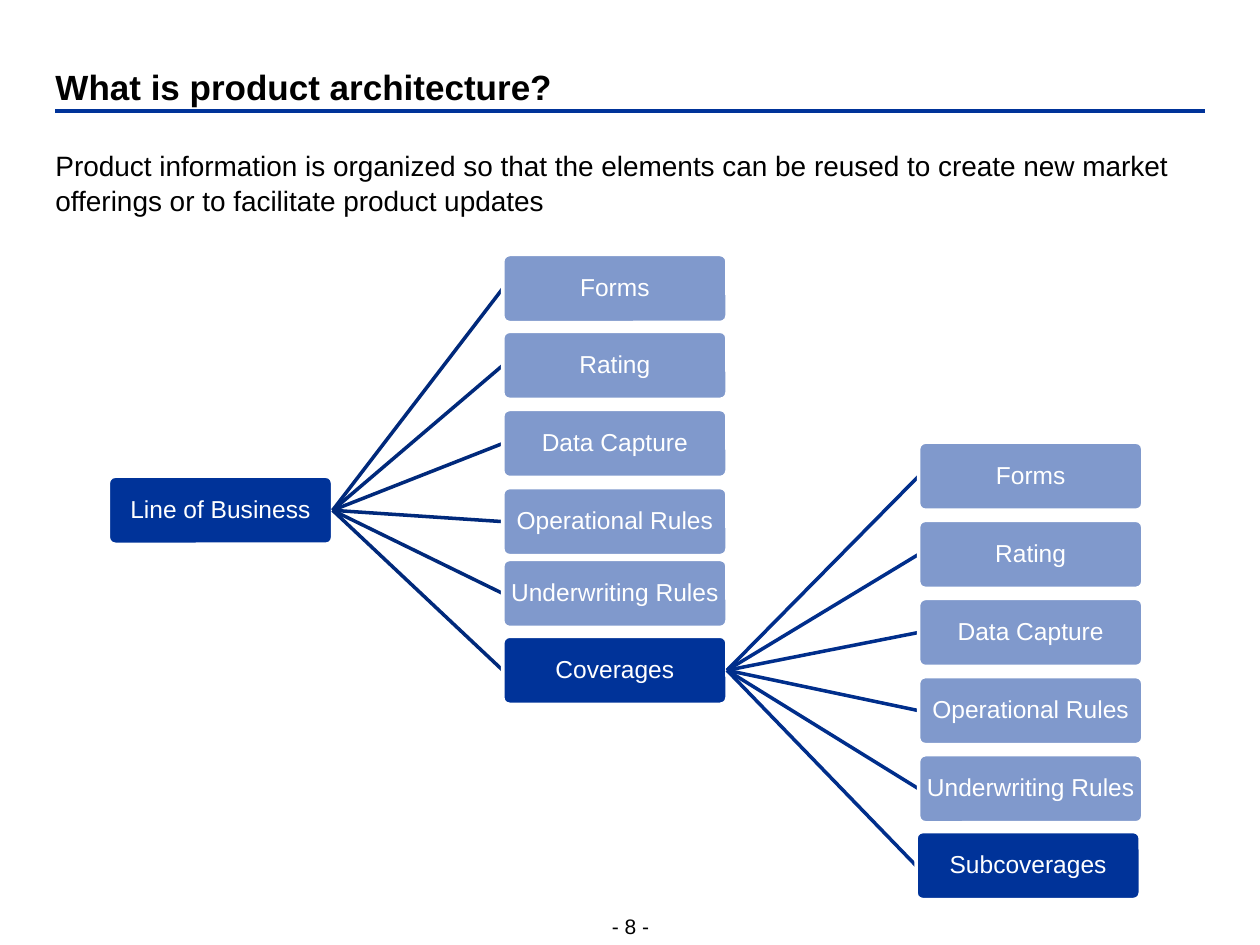
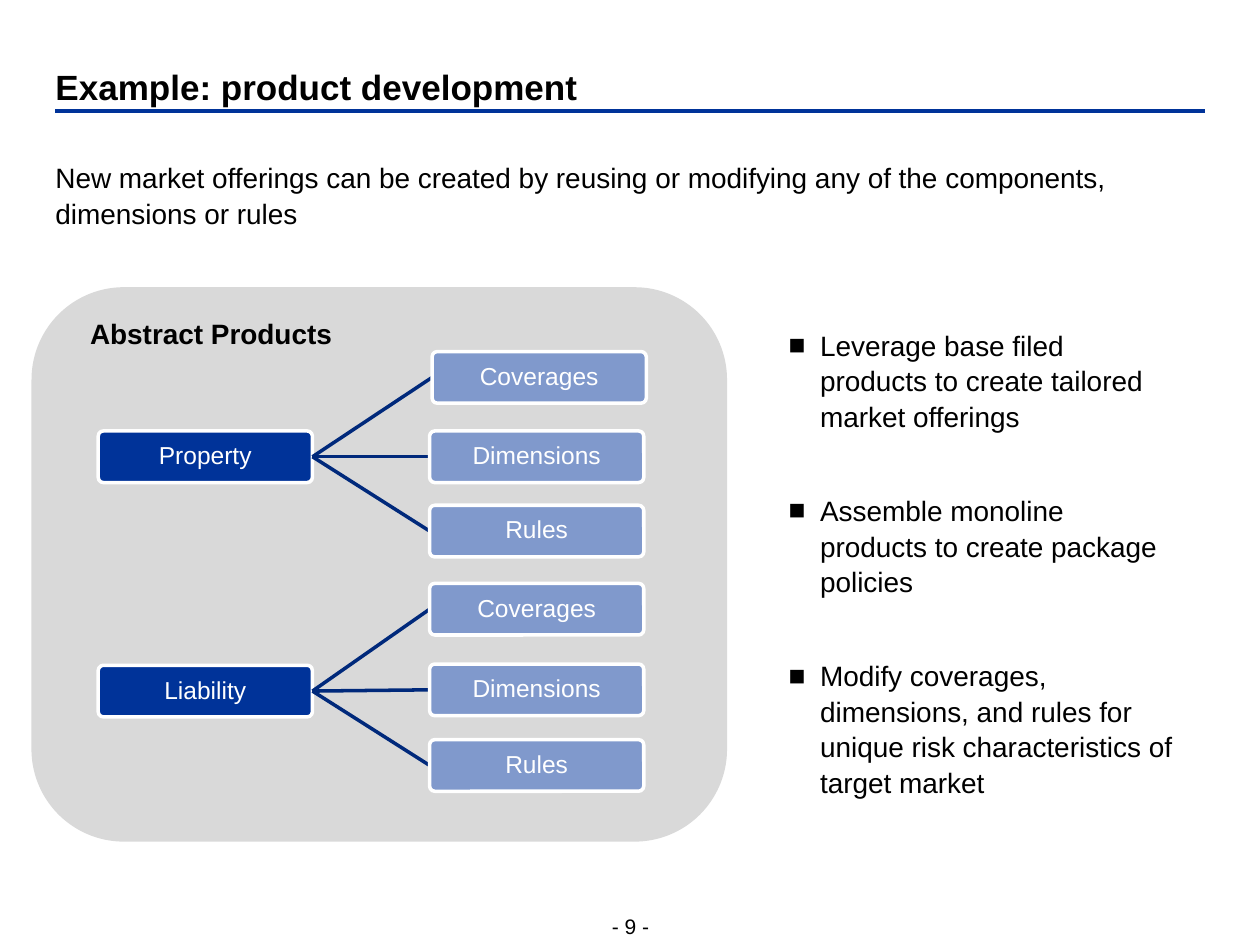
from lxml import etree
from pptx import Presentation
from pptx.dml.color import RGBColor
from pptx.enum.shapes import MSO_CONNECTOR, MSO_SHAPE
from pptx.enum.text import MSO_ANCHOR, PP_ALIGN
from pptx.oxml.ns import qn
from pptx.util import Inches, Pt

FONT = "Arial"
BLACK = RGBColor(0x00, 0x00, 0x00)
WHITE = RGBColor(0xFF, 0xFF, 0xFF)
BLUE = RGBColor(0x00, 0x33, 0x99)
LIGHT_BLUE = RGBColor(0x80, 0x99, 0xCC)
NAVY = RGBColor(0x00, 0x29, 0x7B)
DEEP_BLUE = RGBColor(0x00, 0x2E, 0x8B)
GREY = RGBColor(0xD9, 0xD9, 0xD9)

LINE_SPACING = 1.06
LEFT, WIDTH = 0.44, 9.12
RIGHT, LEFT_SIDE = 3, 1  # connection sites of a rectangle


def set_margins(tf, left=0, top=0, right=0, bottom=0):
    tf.margin_left, tf.margin_top = Inches(left), Inches(top)
    tf.margin_right, tf.margin_bottom = Inches(right), Inches(bottom)


def format_paragraph(p, size, color=BLACK, bold=False, align=PP_ALIGN.LEFT,
                     spacing=LINE_SPACING):
    p.alignment = align
    p.line_spacing = spacing
    for r in p.runs:
        r.font.name, r.font.size = FONT, Pt(size)
        r.font.bold, r.font.color.rgb = bold, color


def add_text(slide, box, text, size, anchor=MSO_ANCHOR.TOP, wrap=True, **style):
    tf = slide.shapes.add_textbox(*map(Inches, box)).text_frame
    tf.word_wrap, tf.vertical_anchor = wrap, anchor
    set_margins(tf)
    tf.text = text
    format_paragraph(tf.paragraphs[0], size, **style)


def add_line(slide, start, end, color, width):
    line = slide.shapes.add_connector(MSO_CONNECTOR.STRAIGHT,
                                      *map(Inches, start + end))
    line.line.color.rgb, line.line.width = color, Pt(width)
    etree.SubElement(line._element.spPr, qn("a:effectLst"))
    return line


def add_rounded(slide, box, fill):
    sp = slide.shapes.add_shape(MSO_SHAPE.ROUNDED_RECTANGLE, *map(Inches, box))
    sp.shadow.inherit = False
    sp.fill.solid()
    sp.fill.fore_color.rgb = fill
    sp.line.fill.background()
    return sp


def add_frame(prs, title, intro, intro_top, number):
    """Slide with title, rule, introduction and page number."""
    slide = prs.slides.add_slide(prs.slide_layouts[6])
    add_text(slide, (4.8, 7.24, 0.41, 0.21), f"- {number} -", 12,
             anchor=MSO_ANCHOR.BOTTOM, wrap=False, align=PP_ALIGN.CENTER)
    add_line(slide, (LEFT, 0.88), (LEFT + WIDTH, 0.88), BLUE, 2.25)
    add_text(slide, (LEFT, 0.45, WIDTH, 0.4), title, 20,
             anchor=MSO_ANCHOR.BOTTOM, bold=True, spacing=1.0)
    add_text(slide, (LEFT, intro_top, WIDTH, 0.68), intro, 16)
    return slide


def add_node(slide, box, text, fill):
    sp = add_rounded(slide, box, fill)
    sp.adjustments[0] = 0.1
    sp.line.color.rgb, sp.line.width = WHITE, Pt(2)
    tf = sp.text_frame
    tf.word_wrap, tf.vertical_anchor = True, MSO_ANCHOR.MIDDLE
    set_margins(tf, 0.01, 0.01, 0.01, 0.01)
    tf.text = text
    format_paragraph(tf.paragraphs[0], 14, color=WHITE,
                     align=PP_ALIGN.CENTER, spacing=0.9)
    return sp


def add_branches(slide, parent, box, children, color, dark_last=False):
    """Join a parent to children given as (text, dx, dy) from its box."""
    left, top, width, height = box
    for i, (text, dx, dy) in enumerate(children):
        x, y = left + dx, top + dy
        # The line lies under the child, so it is made first
        line = add_line(slide, (left + width, top + height / 2),
                        (x, y + height / 2), color, 2)
        line.begin_connect(parent, RIGHT)
        dark = dark_last and i == len(children) - 1
        child = add_node(slide, (x, y, width, height), text,
                         BLUE if dark else LIGHT_BLUE)
        line.end_connect(child, LEFT_SIDE)
    return child


def add_bullets(slide, box, items):
    tf = slide.shapes.add_textbox(*map(Inches, box)).text_frame
    tf.word_wrap = True
    set_margins(tf, 0.1, 0.05, 0.2, 0.05)
    for i, item in enumerate(items):
        p = tf.paragraphs[0] if i == 0 else tf.add_paragraph()
        p.text = item
        format_paragraph(p, 16)
        if i:
            p.space_before = Pt(33.5)
        pPr = p._p.get_or_add_pPr()
        pPr.set("marL", str(Inches(0.25)))
        pPr.set("indent", str(-Inches(0.25)))
        etree.SubElement(pPr, qn("a:buFont")).set("typeface", FONT)
        etree.SubElement(pPr, qn("a:buChar")).set("char", "■")


def add_panel(slide, box, heading):
    tf = add_rounded(slide, box, GREY).text_frame
    tf.word_wrap, tf.vertical_anchor = True, MSO_ANCHOR.TOP
    set_margins(tf, left=0.25)
    tf.text = heading
    format_paragraph(tf.paragraphs[0], 16, bold=True)


def architecture_slide(prs):
    slide = add_frame(
        prs, "What is product architecture?",
        "Product information is organized so that the elements can be reused "
        "to create new market offerings or to facilitate product updates",
        1.16, 8)
    parts = ["Forms", "Rating", "Data Capture", "Operational Rules",
             "Underwriting Rules"]
    size = (1.78, 0.54)

    # Line of business and its parts
    business_box = (0.86, 3.78) + size
    business = add_node(slide, business_box, "Line of Business", BLUE)
    offsets = [-1.76, -1.15, -0.53, 0.09, 0.66, 1.27]
    children = [(text, 3.13, dy)
                for text, dy in zip(parts + ["Coverages"], offsets)]
    coverages = add_branches(slide, business, business_box, children, NAVY,
                             dark_last=True)

    # Coverages and their parts, evenly spaced
    children = [(text, 3.3, -1.54 + 0.62 * i) for i, text in enumerate(parts)]
    children.append(("Subcoverages", 3.28, 1.55))
    add_branches(slide, coverages, (3.99, 5.05) + size, children, DEEP_BLUE,
                 dark_last=True)


def development_slide(prs):
    slide = add_frame(
        prs, "Example: product development",
        "New market offerings can be created by reusing or modifying any of "
        "the components, dimensions or rules", 1.26, 9)
    add_panel(slide, (0.25, 2.28, 5.52, 4.4), "Abstract Products")

    # Each product with its three components
    products = [
        ("Property", 3.42, [(2.65, -0.63), (2.63, 0), (2.63, 0.59)]),
        ("Liability", 5.28, [(2.63, -0.65), (2.63, -0.01), (2.63, 0.59)]),
    ]
    for name, top, offsets in products:
        box = (0.78, top, 1.7, 0.41)
        product = add_node(slide, box, name, BLUE)
        children = [(text, dx, dy) for text, (dx, dy)
                    in zip(["Coverages", "Dimensions", "Rules"], offsets)]
        add_branches(slide, product, box, children, NAVY)

    add_bullets(slide, (6.16, 2.54, 3.35, 4.0), [
        "Leverage base filed products to create tailored market offerings",
        "Assemble monoline products to create package policies",
        "Modify coverages, dimensions, and rules for unique risk "
        "characteristics of target market",
    ])


def main():
    prs = Presentation()
    prs.slide_width, prs.slide_height = Inches(10), Inches(7.5)
    architecture_slide(prs)
    development_slide(prs)
    prs.save("out.pptx")


if __name__ == "__main__":
    main()
